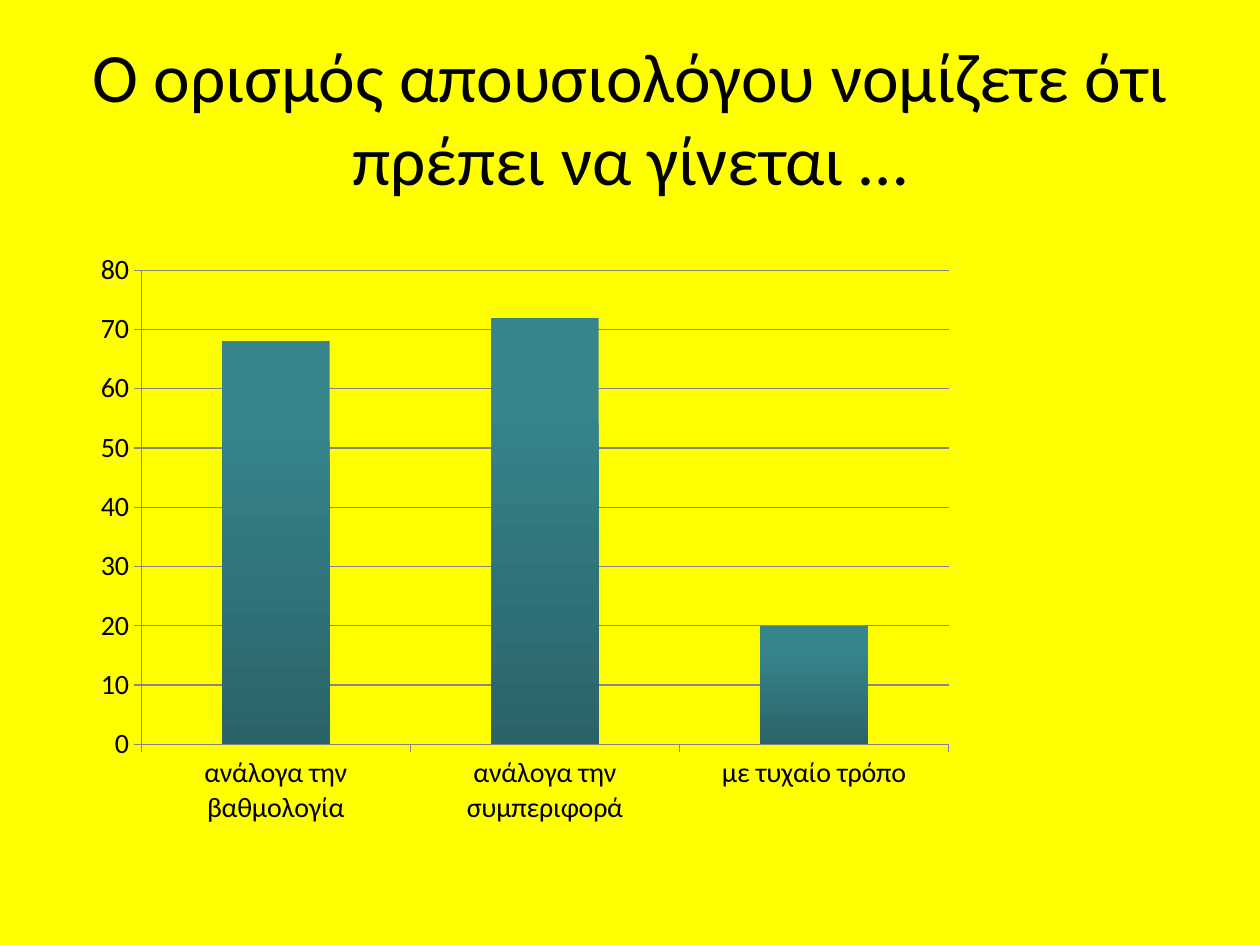
from dataclasses import dataclass

from lxml.etree import SubElement
from pptx import Presentation
from pptx.chart.data import CategoryChartData
from pptx.dml.color import RGBColor
from pptx.enum.chart import XL_CHART_TYPE, XL_TICK_MARK
from pptx.enum.text import MSO_ANCHOR, MSO_AUTO_SIZE, PP_ALIGN
from pptx.oxml.ns import qn
from pptx.util import Inches, Pt


@dataclass(frozen=True)
class Theme:
    back: RGBColor = RGBColor(0xFF, 0xFF, 0x00)
    ink: RGBColor = RGBColor(0x00, 0x00, 0x00)
    rule: RGBColor = RGBColor(0x86, 0x86, 0x86)
    light: RGBColor = RGBColor(0x35, 0x85, 0x8B)
    dark: RGBColor = RGBColor(0x2B, 0x63, 0x69)
    face: str = "Calibri"
    head: Pt = Pt(39.6)
    label: Pt = Pt(16)
    line: Pt = Pt(0.75)


THEME = Theme()
TITLE = "Ο ορισμός απουσιολόγου νομίζετε ότι πρέπει να γίνεται …"
VOTES = {
    "ανάλογα την βαθμολογία": 68,
    "ανάλογα την συμπεριφορά": 72,
    "με τυχαίο τρόπο": 20,
}
# Share of the chart box taken by the area inside the axes
PLOT = {"x": 0.069, "y": 0.08, "w": 0.712, "h": 0.76}


def apply(item, values):
    for name, value in values.items():
        setattr(item, name, value)


def style(font, size):
    apply(font, {"name": THEME.face, "size": size, "bold": False})
    font.color.rgb = THEME.ink


def rule(line):
    line.width = THEME.line
    line.color.rgb = THEME.rule


def add_title(slide, box):
    title = slide.shapes.title
    apply(title, dict(zip(("left", "top", "width", "height"), box)))
    frame = title.text_frame
    frame.text = TITLE
    apply(frame, {
        "word_wrap": True,
        "auto_size": MSO_AUTO_SIZE.NONE,
        "vertical_anchor": MSO_ANCHOR.MIDDLE,
    })
    para = frame.paragraphs[0]
    para.alignment = PP_ALIGN.CENTER
    style(para.runs[0].font, THEME.head)


def set_plot(chart):
    # Fixed inner plot area
    area = chart._chartSpace.chart.plotArea
    layout = area.find(qn("c:layout"))
    if layout is None:
        layout = SubElement(area, qn("c:layout"))
        area.insert(0, layout)
    manual = SubElement(layout, qn("c:manualLayout"))
    parts = {"layoutTarget": "inner", "xMode": "edge", "yMode": "edge", **PLOT}
    for tag, value in parts.items():
        SubElement(manual, qn(f"c:{tag}")).set("val", str(value))


def add_votes(slide, box):
    data = CategoryChartData()
    data.categories = list(VOTES)
    data.add_series("Series 1", list(VOTES.values()))
    chart = slide.shapes.add_chart(
        XL_CHART_TYPE.COLUMN_CLUSTERED, *box, data).chart
    apply(chart, {"has_legend": False, "has_title": False})
    style(chart.font, THEME.label)
    set_plot(chart)

    # Axes and grid
    for axis in (chart.category_axis, chart.value_axis):
        axis.major_tick_mark = XL_TICK_MARK.OUTSIDE
        rule(axis.format.line)
    scale = chart.value_axis
    apply(scale, {"minimum_scale": 0, "maximum_scale": 80, "major_unit": 10,
                  "has_major_gridlines": True})
    rule(scale.major_gridlines.format.line)

    # Shaded columns, light at the top
    plot = chart.plots[0]
    apply(plot, {"gap_width": 150, "vary_by_categories": False})
    fill = plot.series[0].format.fill
    fill.gradient()
    fill.gradient_angle = 270
    stops = ((0.2, THEME.light), (1, THEME.dark))
    for stop, (place, color) in zip(fill.gradient_stops, stops):
        stop.position = place
        stop.color.rgb = color


def main():
    deck = Presentation()
    apply(deck, {"slide_width": Inches(10), "slide_height": Inches(7.5)})
    slide = deck.slides.add_slide(deck.slide_layouts[5])
    fill = slide.background.fill
    fill.solid()
    fill.fore_color.rgb = THEME.back
    left, width = Inches(0.5), Inches(9)
    add_title(slide, (left, Inches(0.3), width, Inches(1.25)))
    add_votes(slide, (left, Inches(1.75), width, Inches(4.95)))
    deck.save("out.pptx")


if __name__ == "__main__":
    main()
